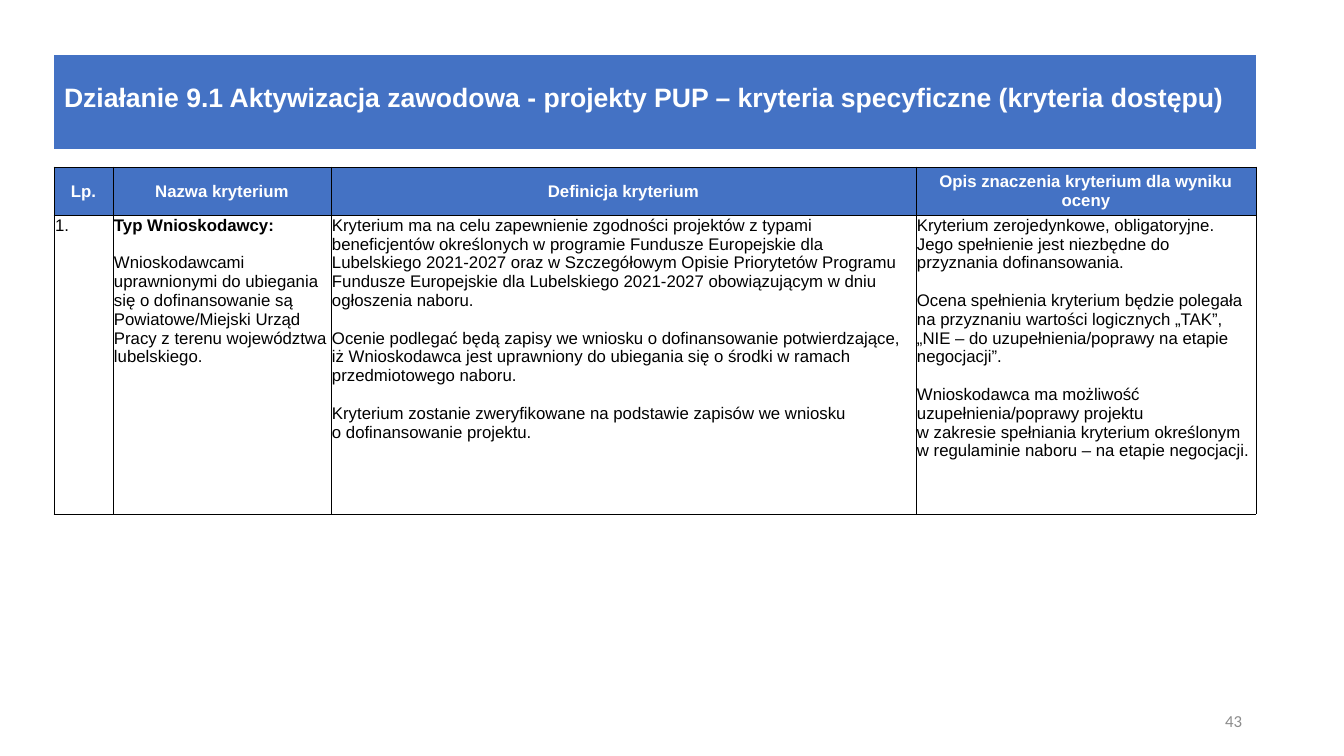
"""Build the slide with the access criteria table for measure 9.1."""
import pptx
import pptx.util
import pptx.dml.color
import pptx.enum.text
import pptx.oxml
import pptx.oxml.ns

PX = 914400 / 100.8
ALIGN = pptx.enum.text.PP_ALIGN
ANCHOR = pptx.enum.text.MSO_ANCHOR
THEME = {
    "blue": "4472C4", "white": "FFFFFF", "black": "000000", "grey": "8C8C8C",
    "head": {"name": "Arial", "size": pptx.util.Pt(19), "bold": True},
    "label": {"name": "Arial", "size": pptx.util.Pt(12), "bold": True},
    "body": {"name": "Arial", "size": pptx.util.Pt(12), "bold": False},
    "page": {"name": "Calibri", "size": pptx.util.Pt(12), "bold": False},
    "gap": pptx.util.Pt(13.4),
}


def px(*lengths):
    """Turn whole pixels into EMU."""
    return [round(length * PX) for length in lengths]


def style(para, kind, tone, align):
    """Format one paragraph from the theme."""
    for key, value in THEME[kind].items():
        setattr(para.font, key, value)
    para.font.color.rgb = pptx.dml.color.RGBColor.from_string(THEME[tone])
    para.alignment = align


deck = pptx.Presentation()
deck.slide_width, deck.slide_height = px(1344, 756)
slide = deck.slides.add_slide(deck.slide_layouts[5])

title = slide.shapes.title
title.left, title.top, title.width, title.height = px(54, 55, 1202, 94)
title.fill.solid()
title.fill.fore_color.rgb = pptx.dml.color.RGBColor.from_string(THEME["blue"])
frame = title.text_frame
frame.text = "Działanie 9.1 Aktywizacja zawodowa - projekty PUP – kryteria specyficzne (kryteria dostępu)"
side, base = px(10, 11)
for key, value in {
    "margin_left": side, "margin_right": side, "margin_top": 0, "margin_bottom": base,
    "word_wrap": True, "vertical_anchor": ANCHOR.MIDDLE,
    "auto_size": pptx.enum.text.MSO_AUTO_SIZE.NONE,
}.items():
    setattr(frame, key, value)
style(frame.paragraphs[0], "head", "white", ALIGN.LEFT)

ROWS = [
    [["Lp."], ["Nazwa kryterium"], ["Definicja kryterium"],
     ["Opis znaczenia kryterium dla wyniku oceny"]],
    [
        ["1."],
        ["Typ Wnioskodawcy:",
         "Wnioskodawcami uprawnionymi do ubiegania się o dofinansowanie są "
         "Powiatowe/Miejski Urząd Pracy z terenu województwa lubelskiego."],
        ["Kryterium ma na celu zapewnienie zgodności projektów z typami beneficjentów "
         "określonych w programie Fundusze Europejskie dla Lubelskiego 2021-2027 oraz "
         "w Szczegółowym Opisie Priorytetów Programu Fundusze Europejskie dla Lubelskiego "
         "2021-2027 obowiązującym w dniu ogłoszenia naboru.",
         "Ocenie podlegać będą zapisy we wniosku o dofinansowanie potwierdzające,\v"
         "iż Wnioskodawca jest uprawniony do ubiegania się o środki w ramach "
         "przedmiotowego naboru.",
         "Kryterium zostanie zweryfikowane na podstawie zapisów we wniosku\v"
         "o dofinansowanie projektu."],
        ["Kryterium zerojedynkowe, obligatoryjne. Jego spełnienie jest niezbędne do "
         "przyznania dofinansowania.",
         "Ocena spełnienia kryterium będzie polegała na przyznaniu wartości logicznych „TAK”,\v"
         "„NIE – do uzupełnienia/poprawy na etapie negocjacji”.",
         "Wnioskodawca ma możliwość uzupełnienia/poprawy projektu\v"
         "w zakresie spełniania kryterium określonym w regulaminie naboru – na etapie negocjacji."],
    ],
]
table = slide.shapes.add_table(2, 4, *px(54, 167, 1202, 347)).table
table.first_row = table.horz_banding = False
for column, width in zip(table.columns, px(59, 218, 585, 340)):
    column.width = width
for row, height in zip(table.rows, px(48, 299)):
    row.height = height

inset = px(1)[0]
for r, row in enumerate(ROWS):
    top = r == 0
    for c, texts in enumerate(row):
        cell = table.cell(r, c)
        for key, value in {
            "margin_left": inset, "margin_right": inset, "margin_top": inset, "margin_bottom": 0,
            "vertical_anchor": ANCHOR.MIDDLE if top else ANCHOR.TOP,
        }.items():
            setattr(cell, key, value)
        for i, text in enumerate(texts):
            para = cell.text_frame.add_paragraph() if i else cell.text_frame.paragraphs[0]
            para.text = text
            bold = top or (c == 1 and i == 0)
            style(para, "label" if bold else "body", "white" if top else "black",
                  ALIGN.CENTER if top else ALIGN.LEFT)
            if i:
                para.space_before = THEME["gap"]
        props = cell._tc.get_or_add_tcPr()
        for edge in ("lnL", "lnR", "lnT", "lnB"):
            props.append(pptx.oxml.parse_xml(
                f'<a:{edge} {pptx.oxml.ns.nsdecls("a")} w="6350"><a:solidFill>'
                f'<a:srgbClr val="{THEME["black"]}"/></a:solidFill></a:{edge}>'))
        if top:
            cell.fill.solid()
            cell.fill.fore_color.rgb = pptx.dml.color.RGBColor.from_string(THEME["blue"])
        else:
            cell.fill.background()

page = slide.shapes.add_textbox(*px(950, 701, 302, 40)).text_frame
page.word_wrap = True
page.vertical_anchor = ANCHOR.MIDDLE
page.text = "43"
style(page.paragraphs[0], "page", "grey", ALIGN.RIGHT)

deck.save("out.pptx")
